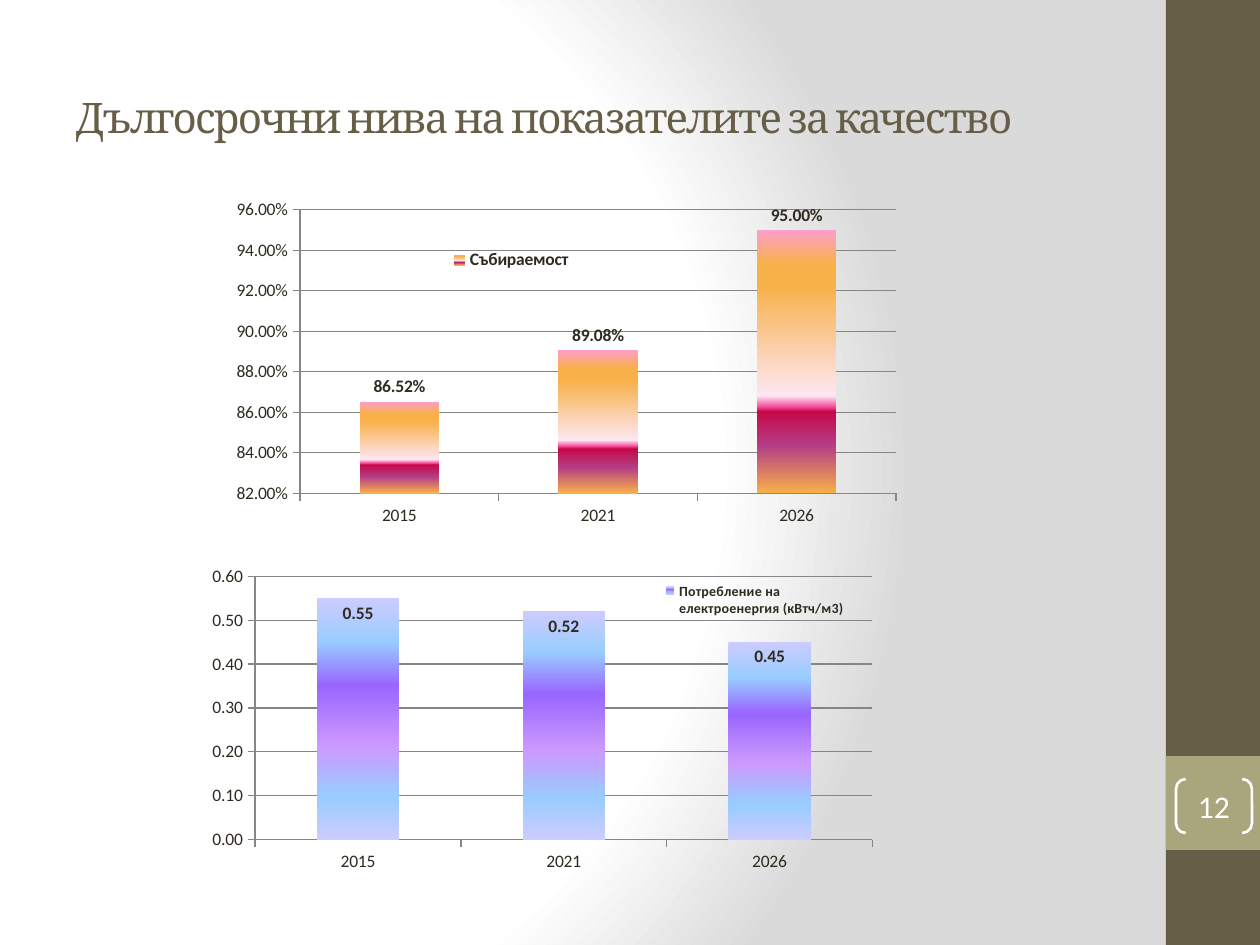
from lxml.etree import SubElement
from pptx import Presentation
from pptx.chart.data import CategoryChartData
from pptx.dml.color import RGBColor
from pptx.enum.chart import XL_CHART_TYPE, XL_LABEL_POSITION, XL_LEGEND_POSITION, XL_TICK_MARK
from pptx.enum.shapes import MSO_SHAPE
from pptx.enum.text import MSO_ANCHOR, PP_ALIGN
from pptx.oxml.ns import qn
from pptx.util import Pt

PX = 914400 / 126
COLORS = {
    "band": "675E47",
    "badge": "A9A57C",
    "text": "2F2B20",
    "axis": "868686",
    "white": "FFFFFF",
}
RGB = {name: RGBColor.from_string(value) for name, value in COLORS.items()}


def set_gradient(parent, stops):
    gradient = next(parent.iter(qn("a:gradFill")))
    for child in list(gradient):
        gradient.remove(child)
    stop_list = SubElement(gradient, qn("a:gsLst"))
    for position, color in stops:
        stop = SubElement(stop_list, qn("a:gs"), pos=str(position * 1000))
        SubElement(stop, qn("a:srgbClr"), val=color)
    return gradient


def set_layout(parent, index, box, inner=False):
    for old in parent.findall(qn("c:layout")):
        parent.remove(old)
    layout = parent.makeelement(qn("c:layout"))
    parent.insert(index, layout)
    manual = SubElement(layout, qn("c:manualLayout"))
    if inner:
        SubElement(manual, qn("c:layoutTarget"), val="inner")
    for tag in ("xMode", "yMode"):
        SubElement(manual, qn("c:" + tag), val="edge")
    for tag, value in zip("xywh", box):
        SubElement(manual, qn("c:" + tag), val=str(value))


presentation = Presentation()
presentation.slide_width = round(1260 * PX)
presentation.slide_height = round(945 * PX)
slide = presentation.slides.add_slide(presentation.slide_layouts[5])

slide.background.fill.gradient()
gradient = set_gradient(slide.element, [(0, "FFFFFF"), (75, "FFFFFF"), (100, "DADADA")])
circle = SubElement(gradient, qn("a:path"), path="circle")
SubElement(circle, qn("a:fillToRect"), l="20000", t="50000", r="100000", b="50000")

for top, height, color in ((0, 945, "band"), (756, 94, "badge")):
    shape = slide.shapes.add_shape(
        MSO_SHAPE.RECTANGLE, *(round(n * PX) for n in (1166, top, 94, height)))
    shape.shadow.inherit = False
    shape.fill.solid()
    shape.fill.fore_color.rgb = RGB[color]
    shape.line.fill.background()

title = slide.shapes.title
title.left, title.top, title.width, title.height = (
    round(n * PX) for n in (63, 38, 1050, 158))
title.text_frame.vertical_anchor = MSO_ANCHOR.MIDDLE
paragraph = title.text_frame.paragraphs[0]
paragraph.alignment = PP_ALIGN.LEFT
run = paragraph.add_run()
run.text = "Дългосрочни нива на показателите за качество"
run.font.name = "Cambria"
run.font.size = Pt(24)
run.font.color.rgb = RGB["band"]
run.font._element.set("spc", "-100")

number = slide.shapes.add_shape(
    MSO_SHAPE.DOUBLE_BRACKET, *(round(n * PX) for n in (1176, 779, 76, 54)))
number.adjustments[0] = 0.18
number.shadow.inherit = False
number.fill.background()
number.line.color.rgb = RGB["white"]
number.line.width = Pt(1.5)
frame = number.text_frame
frame.margin_left = frame.margin_right = frame.margin_top = frame.margin_bottom = 0
frame.vertical_anchor = MSO_ANCHOR.MIDDLE
paragraph = frame.paragraphs[0]
paragraph.alignment = PP_ALIGN.CENTER
run = paragraph.add_run()
run.text = "12"
run.font.name = "Calibri"
run.font.size = Pt(18)
run.font.color.rgb = RGB["white"]

charts = [
    {
        "name": "Събираемост", "values": (0.8652, 0.8908, 0.95),
        "type": XL_CHART_TYPE.COLUMN_CLUSTERED, "box": (210, 189, 693, 346),
        "scale": (0.82, 0.96, 0.02), "format": "0.00%", "overlap": 0,
        "label": XL_LABEL_POSITION.OUTSIDE_END, "legend_size": 10,
        "plot": (0.13, 0.06, 0.86, 0.82), "legend": (0.34, 0.17, 0.19, 0.07),
        "stops": [(0, "FC9FCB"), (13, "F8B049"), (21, "F8B049"), (63, "FEE7F2"),
                  (67, "F952A0"), (69, "C50849"), (82, "B43E85"), (100, "F8B049")],
    },
    {
        "name": "Потребление на електроенергия (кВтч/м3)", "values": (0.55, 0.52, 0.45),
        "type": XL_CHART_TYPE.COLUMN_STACKED, "box": (189, 557, 735, 325),
        "scale": (0, 0.6, 0.1), "format": "0.00", "overlap": 100,
        "label": XL_LABEL_POSITION.INSIDE_END, "legend_size": 8,
        "plot": (0.09, 0.06, 0.84, 0.81), "legend": (0.63, 0.07, 0.28, 0.13),
        "stops": [(0, "CCCCFF"), (18, "99CCFF"), (36, "9966FF"),
                  (61, "CC99FF"), (82, "99CCFF"), (100, "CCCCFF")],
    },
]

for item in charts:
    data = CategoryChartData(number_format=item["format"])
    data.categories = ["2015", "2021", "2026"]
    data.add_series(item["name"], item["values"])
    chart = slide.shapes.add_chart(
        item["type"], *(round(n * PX) for n in item["box"]), data).chart
    chart.has_title = False
    chart.font.name = "Calibri"
    chart.font.size = Pt(10)
    chart.font.color.rgb = RGB["text"]

    value_axis = chart.value_axis
    value_axis.minimum_scale, value_axis.maximum_scale, value_axis.major_unit = item["scale"]
    value_axis.has_major_gridlines = True
    value_axis.tick_labels.number_format = item["format"]
    value_axis.tick_labels.number_format_is_linked = False
    for axis in (chart.category_axis, value_axis):
        axis.major_tick_mark = XL_TICK_MARK.OUTSIDE
        axis.minor_tick_mark = XL_TICK_MARK.NONE
    for line in (chart.category_axis.format.line, value_axis.format.line,
                 value_axis.major_gridlines.format.line):
        line.color.rgb = RGB["axis"]
        line.width = Pt(0.75)

    plot = chart.plots[0]
    plot.vary_by_categories = False
    plot.gap_width = 150
    plot.overlap = item["overlap"]
    series = plot.series[0]
    series.format.fill.gradient()
    gradient = set_gradient(series._element, item["stops"])
    SubElement(gradient, qn("a:lin"), ang="5400000", scaled="0")

    labels = series.data_labels
    labels.show_value = True
    labels.position = item["label"]
    labels.number_format = item["format"]
    labels.number_format_is_linked = False
    labels.font.name = "Calibri"
    labels.font.size = Pt(10)
    labels.font.bold = True
    labels.font.color.rgb = RGB["text"]

    chart.has_legend = True
    legend = chart.legend
    legend.position = XL_LEGEND_POSITION.RIGHT
    legend.include_in_layout = False
    legend.font.name = "Calibri"
    legend.font.size = Pt(item["legend_size"])
    legend.font.bold = True
    legend.font.color.rgb = RGB["text"]
    set_layout(legend._element, 1, item["legend"])
    set_layout(next(chart.element.iter(qn("c:plotArea"))), 0, item["plot"], inner=True)

presentation.save("out.pptx")
